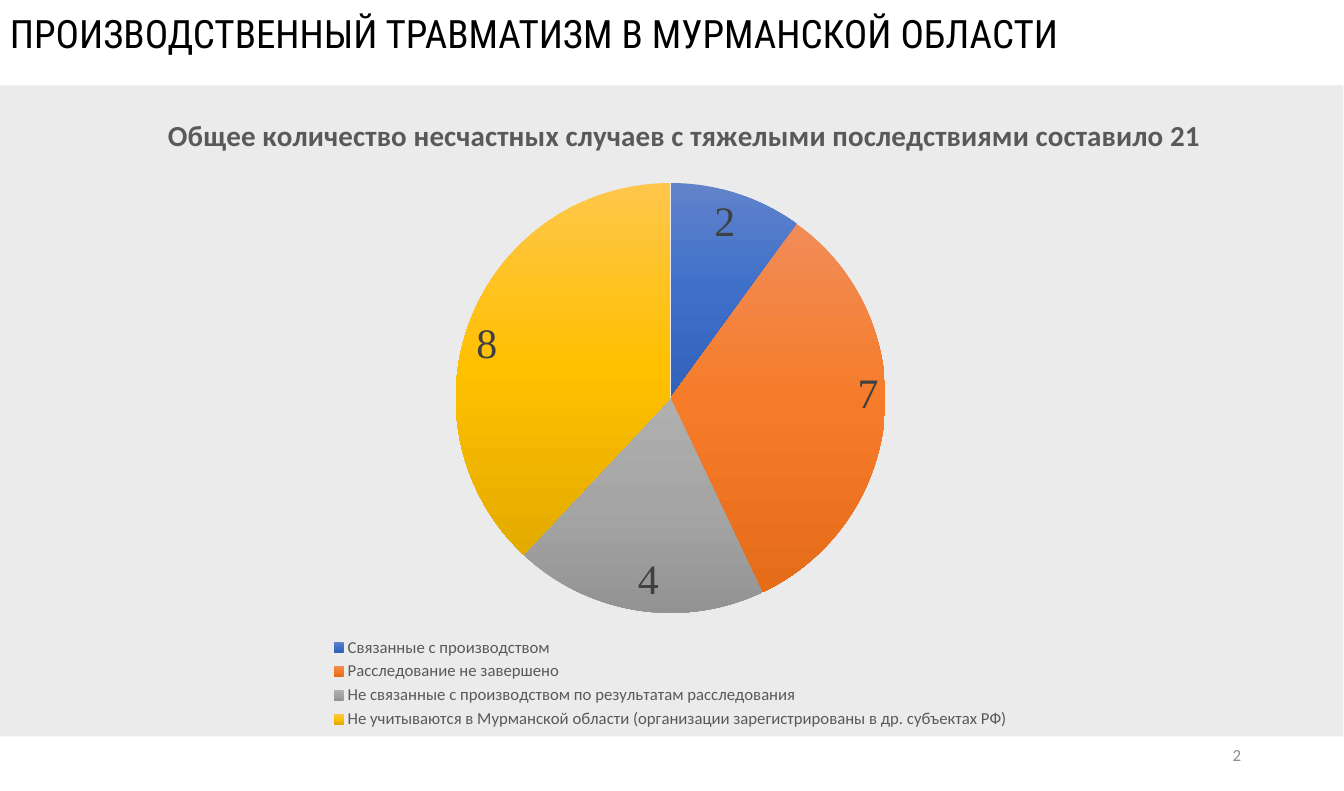
"""Builds a slide with a pie chart of workplace accidents in the Murmansk region."""
from lxml import etree
from pptx import Presentation
from pptx.chart.data import CategoryChartData
from pptx.dml.color import RGBColor
from pptx.enum.chart import XL_CHART_TYPE, XL_LABEL_POSITION, XL_LEGEND_POSITION
from pptx.enum.shapes import MSO_SHAPE
from pptx.enum.text import MSO_ANCHOR, PP_ALIGN
from pptx.oxml import parse_xml
from pptx.oxml.ns import nsdecls, qn
from pptx.util import Inches, Pt

COLORS = {"panel": "EBEBEB", "heading": "000000", "number": "8C8C8C",
          "chart text": "595959", "label": "404040"}
CASES = [
    ("Связанные с производством", 10, "2", ("6183CB", "3E70CA", "3062BB")),
    ("Расследование не завершено", 33, "7", ("F18C57", "F67B28", "E56C19")),
    ("Не связанные с производством по результатам расследования", 19, "4",
     ("AFAFAF", "A5A5A5", "939393")),
    ("Не учитываются в Мурманской области (организации зарегистрированы в др. субъектах РФ)", 38, "8",
     ("FFC64B", "FFC000", "E3AB00")),
]


def set_font(font, name, size, color, bold=False):
    values = {"name": name, "size": Pt(size), "bold": bold}
    for key, value in values.items():
        setattr(font, key, value)
    font.color.rgb = RGBColor.from_string(COLORS[color])


def make_layout(target, **places):
    layout = etree.Element(qn("c:layout"))
    manual = etree.SubElement(layout, qn("c:manualLayout"))
    for key, value in places.items():
        etree.SubElement(manual, qn(f"c:{key}")).set("val", str(value))
    for old in target.findall(qn("c:layout")):
        target.remove(old)
    return layout


presentation = Presentation()
presentation.slide_width = Inches(34 / 2.54)
presentation.slide_height = Inches(20 / 2.54)
slide = presentation.slides.add_slide(presentation.slide_layouts[6])

panel = slide.shapes.add_shape(MSO_SHAPE.RECTANGLE, Inches(0), Inches(0.85), Inches(13.38), Inches(6.48))
panel.shadow.inherit = False
panel.fill.solid()
panel.fill.fore_color.rgb = RGBColor.from_string(COLORS["panel"])
panel.line.fill.background()

TEXTS = [
    ("ПРОИЗВОДСТВЕННЫЙ ТРАВМАТИЗМ В МУРМАНСКОЙ ОБЛАСТИ", (0, 0.04, 13.72, 0.57),
     MSO_ANCHOR.TOP, PP_ALIGN.LEFT, ("Roboto Condensed", 28, "heading")),
    ("2", (9.45, 7.3, 3.01, 0.42),
     MSO_ANCHOR.MIDDLE, PP_ALIGN.RIGHT, ("Calibri", 12.1, "number")),
]
for text, box, anchor, alignment, font_values in TEXTS:
    frame = slide.shapes.add_textbox(*map(Inches, box)).text_frame
    frame.word_wrap = True
    frame.vertical_anchor = anchor
    paragraph = frame.paragraphs[0]
    paragraph.alignment = alignment
    run = paragraph.add_run()
    run.text = text
    set_font(run.font, *font_values)

chart_data = CategoryChartData()
chart_data.categories = [name for name, share, count, shades in CASES]
chart_data.add_series("Series 1", [share for name, share, count, shades in CASES])
chart = slide.shapes.add_chart(XL_CHART_TYPE.PIE, Inches(0.11), Inches(0.96), Inches(13.14),
                               Inches(6.34), chart_data).chart
set_font(chart.font, "Calibri", 10, "heading")

chart.has_title = True
title_run = chart.chart_title.text_frame.paragraphs[0].add_run()
title_run.text = "Общее количество несчастных случаев с тяжелыми последствиями составило 21"
set_font(title_run.font, "Calibri", 20.8, "chart text", bold=True)
title = chart.chart_title._element
title_layout = make_layout(title, xMode="edge", yMode="edge", x=0.115, y=0.02)
title.find(qn("c:tx")).addnext(title_layout)

chart.has_legend = True
chart.legend.position = XL_LEGEND_POSITION.BOTTOM
chart.legend.include_in_layout = False
set_font(chart.legend.font, "Calibri", 12, "chart text")
legend = chart.legend._element
legend_layout = make_layout(legend, xMode="edge", yMode="edge", x=0.24, y=0.843, w=0.52, h=0.157)
legend.find(qn("c:legendPos")).addnext(legend_layout)

plot = chart.plots[0]
plot.vary_by_categories = True
plot_area = plot._element.getparent()
plot_area.insert(0, make_layout(plot_area, layoutTarget="inner", xMode="edge", yMode="edge",
                                x=0.337, y=0.136, w=0.326, h=0.675))

series = plot.series[0]
labels = series.data_labels
label_flags = {"show_value": False, "show_percentage": True, "show_category_name": True,
               "position": XL_LABEL_POSITION.INSIDE_END}
for key, value in label_flags.items():
    setattr(labels, key, value)
set_font(labels.font, "Times New Roman", 30, "label")

for index, (name, share, count, shades) in enumerate(CASES):
    point = series.points[index]
    point.format.line.fill.background()
    label_run = point.data_label.text_frame.paragraphs[0].add_run()
    label_run.text = count
    set_font(label_run.font, "Times New Roman", 30, "label")
    point.data_label.position = XL_LABEL_POSITION.INSIDE_END
    stops = "".join(f'<a:gs pos="{step * 50000}"><a:srgbClr val="{shade}"/></a:gs>'
                    for step, shade in enumerate(shades))
    gradient = parse_xml(f'<a:gradFill {nsdecls("a")} rotWithShape="1"><a:gsLst>{stops}</a:gsLst>'
                         '<a:lin ang="5400000" scaled="0"/></a:gradFill>')
    series._element.findall(qn("c:dPt"))[index].find(qn("c:spPr")).insert(0, gradient)

presentation.save("out.pptx")
